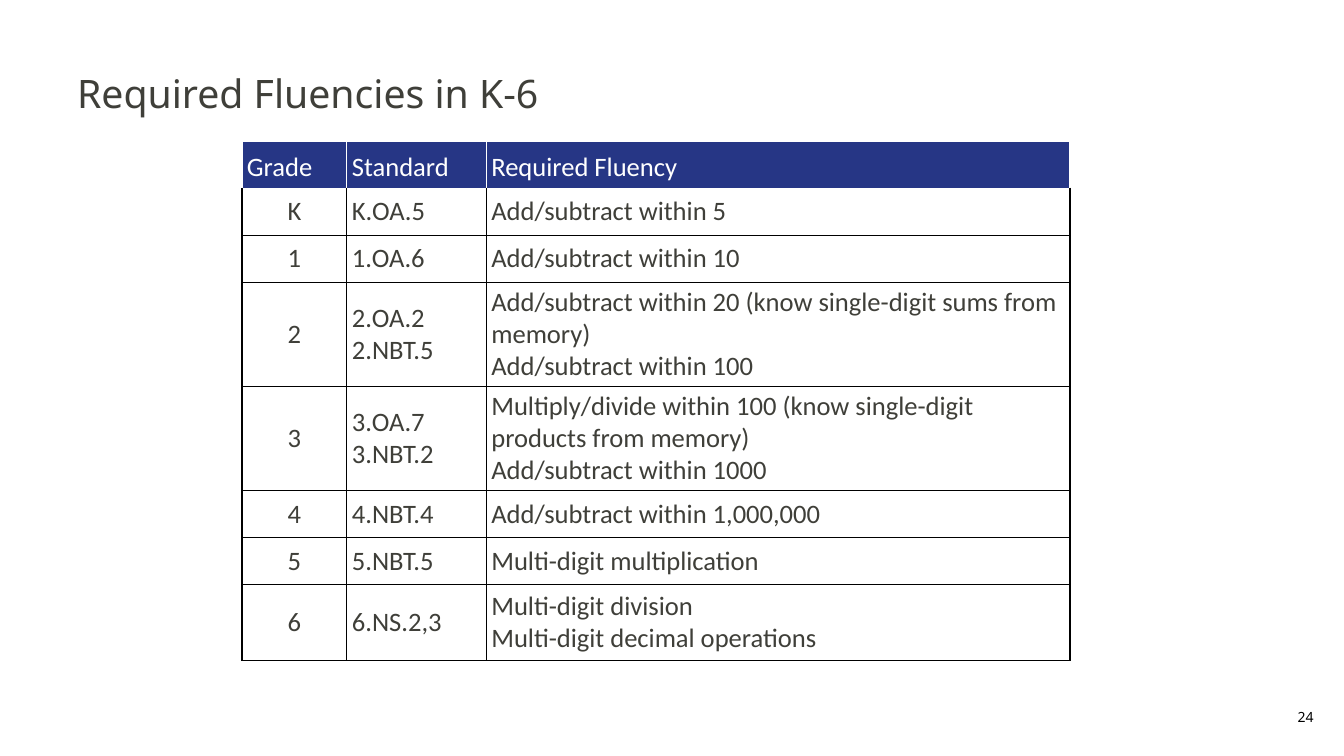
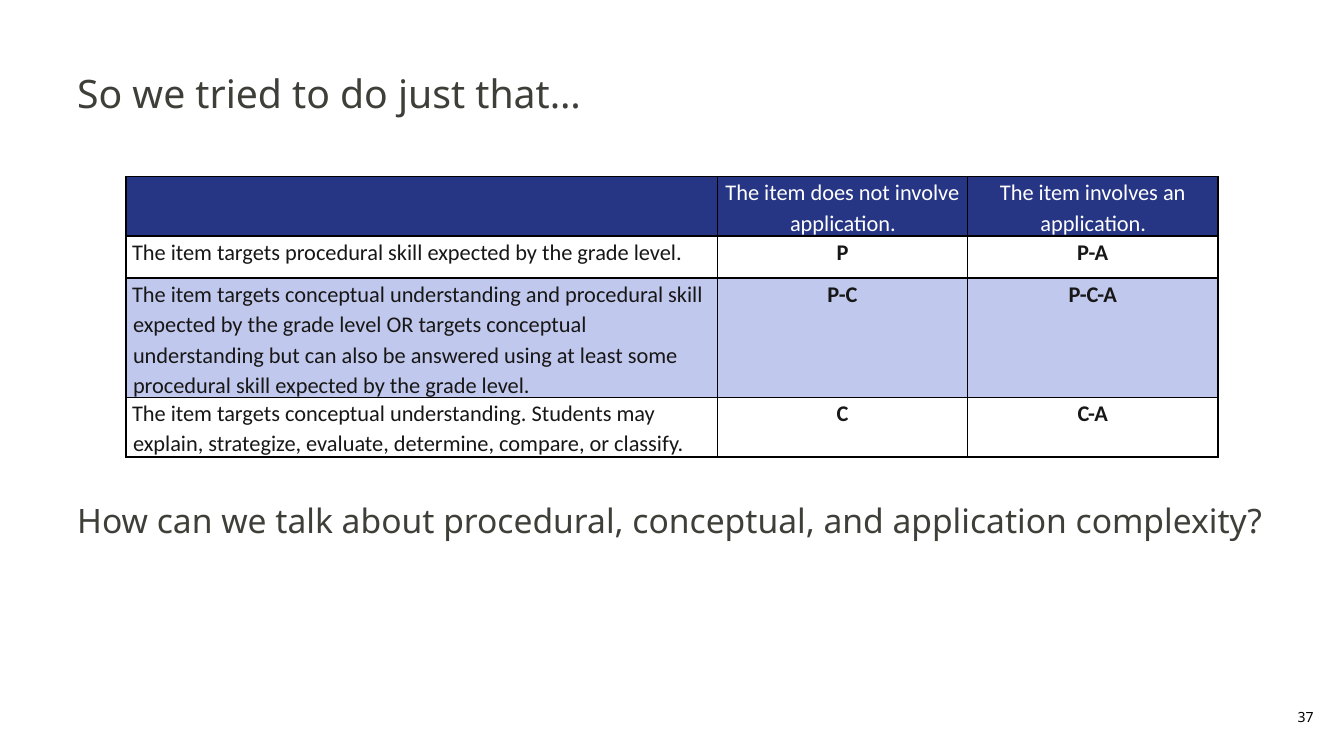
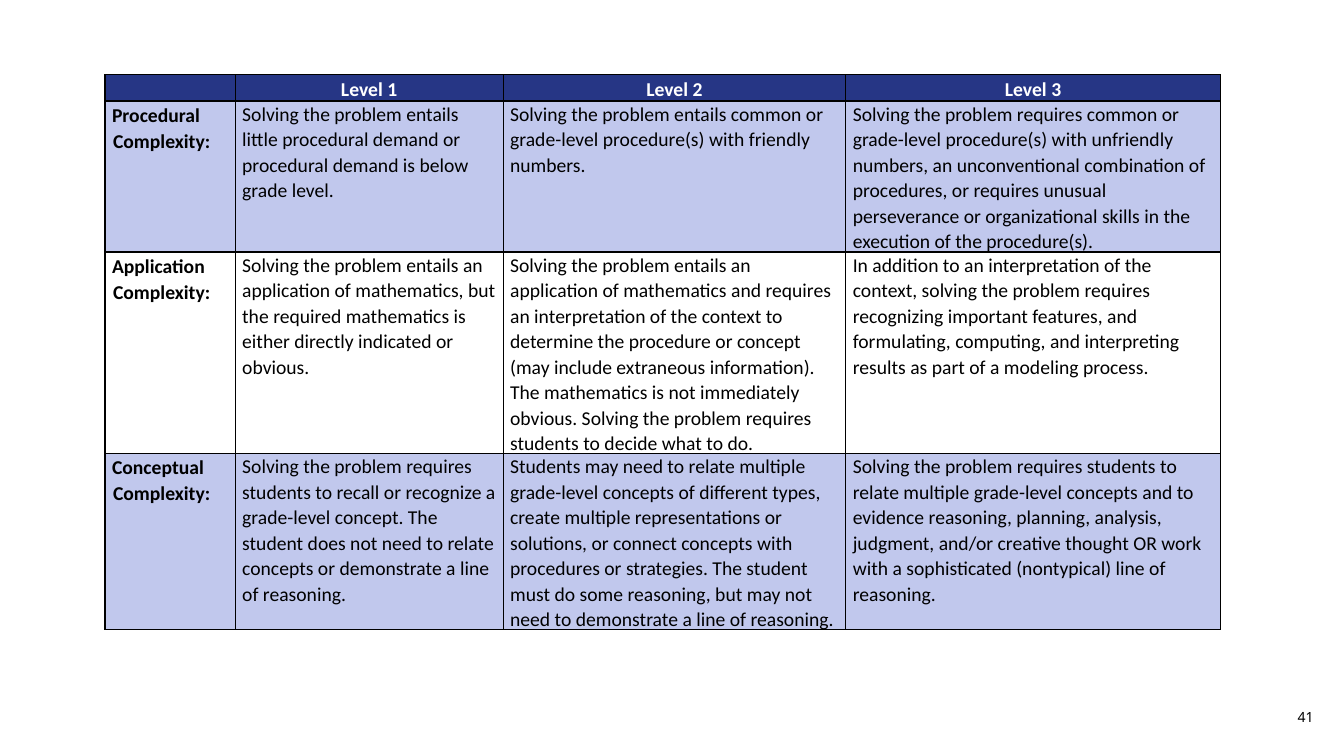
import dataclasses
import lxml.etree
import pptx
import pptx.dml.color
import pptx.enum.text
import pptx.oxml.ns
import pptx.util

ALIGN = pptx.enum.text.PP_ALIGN
ANCHOR = pptx.enum.text.MSO_ANCHOR


@dataclasses.dataclass(frozen=True)
class Theme:
    navy: str = "263685"
    lavender: str = "C1C8ED"
    white: str = "FFFFFF"
    black: str = "000000"
    ink: str = "3F3F39"
    soft_black: str = "181717"
    heading_font: str = "Noto Sans"
    table_font: str = "Calibri"
    title_size: int = 28
    body_size: int = 24
    number_size: int = 10
    fluency_size: int = 19
    item_size: int = 16
    level_size: int = 14
    border_width: int = 1
    hanging: float = 0.01


THEME = Theme()
SLIDE_WIDTH, SLIDE_HEIGHT = pptx.util.Inches(13.333), pptx.util.Inches(7.5)
GRID_COLUMNS, GRID_ROWS = 160, 90

TITLE_PLACE = (8, 3.6, 144, 15)
BODY_PLACE = (8, 58.9, 144, 21.5)
NUMBER_PLACE = (132.5, 83.75, 25.5, 3.25)

FLUENCIES = [
    ["Grade", "Standard", "Required Fluency"],
    ["K", "K.OA.5", "Add/subtract within 5"],
    ["1", "1.OA.6", "Add/subtract within 10"],
    ["2", "2.OA.2\n2.NBT.5",
     "Add/subtract within 20 (know single-digit sums from memory)\nAdd/subtract within 100"],
    ["3", "3.OA.7\n3.NBT.2",
     "Multiply/divide within 100 (know single-digit products from memory)\nAdd/subtract within 1000"],
    ["4", "4.NBT.4", "Add/subtract within 1,000,000"],
    ["5", "5.NBT.5", "Multi-digit multiplication"],
    ["6", "6.NS.2,3", "Multi-digit division\nMulti-digit decimal operations"],
]

ITEM_TARGETS = [
    ["", "The item does not involve application.", "The item involves an application."],
    ["The item targets procedural skill expected by the grade level.", "P", "P-A"],
    ["The item targets conceptual understanding and procedural skill expected by the grade level "
     "OR targets conceptual understanding but can also be answered using at least some procedural "
     "skill expected by the grade level.", "P-C", "P-C-A"],
    ["The item targets conceptual understanding. Students may explain, strategize, evaluate, "
     "determine, compare, or classify.", "C", "C-A"],
]

COMPLEXITY_LEVELS = [
    ["", "Level 1", "Level 2", "Level 3"],
    ["Procedural Complexity:",
     "Solving the problem entails little procedural demand or procedural demand is below grade level.",
     "Solving the problem entails common or grade-level procedure(s) with friendly numbers.",
     "Solving the problem requires common or grade-level procedure(s) with unfriendly numbers, an "
     "unconventional combination of procedures, or requires unusual perseverance or organizational "
     "skills in the execution of the procedure(s)."],
    ["Application Complexity:",
     "Solving the problem entails an application of mathematics, but the required mathematics is "
     "either directly indicated or obvious.",
     "Solving the problem entails an application of mathematics and requires an interpretation of "
     "the context to determine the procedure or concept (may include extraneous information). The "
     "mathematics is not immediately obvious. Solving the problem requires students to decide what to do.",
     "In addition to an interpretation of the context, solving the problem requires recognizing "
     "important features, and formulating, computing, and interpreting results as part of a "
     "modeling process."],
    ["Conceptual Complexity:",
     "Solving the problem requires students to recall or recognize a grade-level concept. The "
     "student does not need to relate concepts or demonstrate a line of reasoning.",
     "Students may need to relate multiple grade-level concepts of different types, create multiple "
     "representations or solutions, or connect concepts with procedures or strategies. The student "
     "must do some reasoning, but may not need to demonstrate a line of reasoning.",
     "Solving the problem requires students to relate multiple grade-level concepts and to evidence "
     "reasoning, planning, analysis, judgment, and/or creative thought OR work with a sophisticated "
     "(nontypical) line of reasoning."],
]


def across(columns):
    return round(SLIDE_WIDTH * columns / GRID_COLUMNS)


def down(rows):
    return round(SLIDE_HEIGHT * rows / GRID_ROWS)


def place_on_grid(left, top, width, height):
    return across(left), down(top), across(width), down(height)


def set_attributes(target, values):
    for name, value in values.items():
        setattr(target, name, value)


def write_paragraph(paragraph, text, style):
    set_attributes(paragraph, {
        "alignment": style.get("align", ALIGN.LEFT),
        "line_spacing": style.get("spacing", 1.0),
    })
    if style.get("hanging"):
        indent = pptx.util.Inches(THEME.hanging)
        properties = paragraph._p.get_or_add_pPr()
        properties.set("marL", str(indent))
        properties.set("indent", str(-indent))
    if not text:
        lxml.etree.SubElement(paragraph._p, pptx.oxml.ns.qn("a:endParaRPr"),
                              sz=str(style["size"] * 100))
        return
    run = paragraph.add_run()
    run.text = text
    set_attributes(run.font, {
        "name": style["font"],
        "size": pptx.util.Pt(style["size"]),
        "bold": style.get("bold", False),
    })
    run.font.color.rgb = pptx.dml.color.RGBColor.from_string(style["color"])


def write_text(text_frame, text, style):
    for index, line in enumerate(text.split("\n")):
        paragraph = text_frame.add_paragraph() if index else text_frame.paragraphs[0]
        write_paragraph(paragraph, line, style)


def add_text(slide, place, text, style):
    text_frame = slide.shapes.add_textbox(*place_on_grid(*place)).text_frame
    set_attributes(text_frame, {
        "word_wrap": True,
        "vertical_anchor": style.get("anchor", ANCHOR.TOP),
    })
    write_text(text_frame, text, style)


def add_title(slide, text):
    add_text(slide, TITLE_PLACE, text, {
        "font": THEME.heading_font, "size": THEME.title_size,
        "color": THEME.ink, "anchor": ANCHOR.MIDDLE})


def add_body(slide, text):
    add_text(slide, BODY_PLACE, text, {
        "font": THEME.heading_font, "size": THEME.body_size, "color": THEME.ink})


def add_numbered_slide(presentation, number):
    slide = presentation.slides.add_slide(presentation.slide_layouts[6])
    add_text(slide, NUMBER_PLACE, f"{number} ", {
        "font": THEME.heading_font, "size": THEME.number_size,
        "color": THEME.black, "align": ALIGN.RIGHT})
    return slide


def draw_borders(cell, colors):
    for side, color in colors.items():
        line = lxml.etree.SubElement(cell._tc.get_or_add_tcPr(), pptx.oxml.ns.qn(f"a:ln{side}"),
                                     w=str(pptx.util.Pt(THEME.border_width)))
        fill = lxml.etree.SubElement(line, pptx.oxml.ns.qn("a:solidFill"))
        lxml.etree.SubElement(fill, pptx.oxml.ns.qn("a:srgbClr"), val=color)


def format_cell(cell, text, style, fill_color, border_colors):
    draw_borders(cell, border_colors)
    cell.fill.solid()
    cell.fill.fore_color.rgb = pptx.dml.color.RGBColor.from_string(fill_color)
    inset = pptx.util.Inches(style["inset"])
    set_attributes(cell, {
        "margin_left": inset, "margin_right": inset, "margin_top": 0, "margin_bottom": 0,
        "vertical_anchor": style.get("anchor", ANCHOR.TOP),
    })
    write_text(cell.text_frame, text, style)


def add_table(slide, corner, widths, heights, texts, base, header, column_styles, row_fills,
              header_border=THEME.black):
    place = place_on_grid(*corner, sum(widths), sum(heights))
    table = slide.shapes.add_table(len(heights), len(widths), *place).table
    set_attributes(table, {"first_row": False, "horz_banding": False})
    for column, width in zip(table.columns, widths):
        column.width = across(width)
    for row, height in zip(table.rows, heights):
        row.height = down(height)
    for row_index, row_texts in enumerate(texts):
        side_color = THEME.black if row_index else header_border
        top_color = THEME.black if row_index > 1 else header_border
        borders = {"L": side_color, "R": side_color, "T": top_color, "B": side_color}
        for column_index, text in enumerate(row_texts):
            special = column_styles[column_index] if row_index else header
            style = {"font": THEME.table_font, **base, **special}
            format_cell(table.cell(row_index, column_index), text, style,
                        row_fills[row_index], borders)


def build_fluencies(presentation):
    slide = add_numbered_slide(presentation, 24)
    add_title(slide, "Required Fluencies in K-6")
    short, tall = 5.6, 12.4
    add_table(
        slide, (28.8, 16.8), [12.5, 16.6, 69.5],
        [short, short, short, tall, tall, short, short, 9], FLUENCIES,
        base={"size": THEME.fluency_size, "color": THEME.ink, "inset": 0.05,
              "anchor": ANCHOR.MIDDLE},
        header={"color": THEME.white, "spacing": 1.15},
        column_styles=[{"align": ALIGN.CENTER}, {}, {}],
        row_fills=[THEME.navy] + [THEME.white] * 7,
        header_border=THEME.white)


def build_item_targets(presentation):
    slide = add_numbered_slide(presentation, 37)
    add_title(slide, "So we tried to do just that…")
    add_body(slide, "How can we talk about procedural, conceptual, and application complexity?")
    code = {"align": ALIGN.CENTER, "bold": True}
    add_table(
        slide, (15, 21), [70.4, 29.8, 29.8], [6.1, 5, 10.7, 5.3], ITEM_TARGETS,
        base={"size": THEME.item_size, "color": THEME.soft_black, "inset": 0.06,
              "spacing": 1.11, "hanging": True},
        header={"color": THEME.white, "align": ALIGN.CENTER},
        column_styles=[{}, code, code],
        row_fills=[THEME.navy, THEME.white, THEME.lavender, THEME.white])


def build_complexity_levels(presentation):
    slide = add_numbered_slide(presentation, 41)
    add_table(
        slide, (12.5, 8.9), [15.5, 31.9, 40.8, 44.6], [2.6, 14.4, 19.2, 19.2],
        COMPLEXITY_LEVELS,
        base={"size": THEME.level_size, "color": THEME.black, "inset": 0.07, "spacing": 1.07},
        header={"color": THEME.white, "align": ALIGN.CENTER, "bold": True, "spacing": 1.11},
        column_styles=[{"bold": True, "spacing": 1.11, "hanging": True}, {}, {}, {}],
        row_fills=[THEME.navy, THEME.lavender, THEME.white, THEME.lavender])


def main():
    presentation = pptx.Presentation()
    set_attributes(presentation, {"slide_width": SLIDE_WIDTH, "slide_height": SLIDE_HEIGHT})
    build_fluencies(presentation)
    build_item_targets(presentation)
    build_complexity_levels(presentation)
    presentation.save("out.pptx")


if __name__ == "__main__":
    main()
